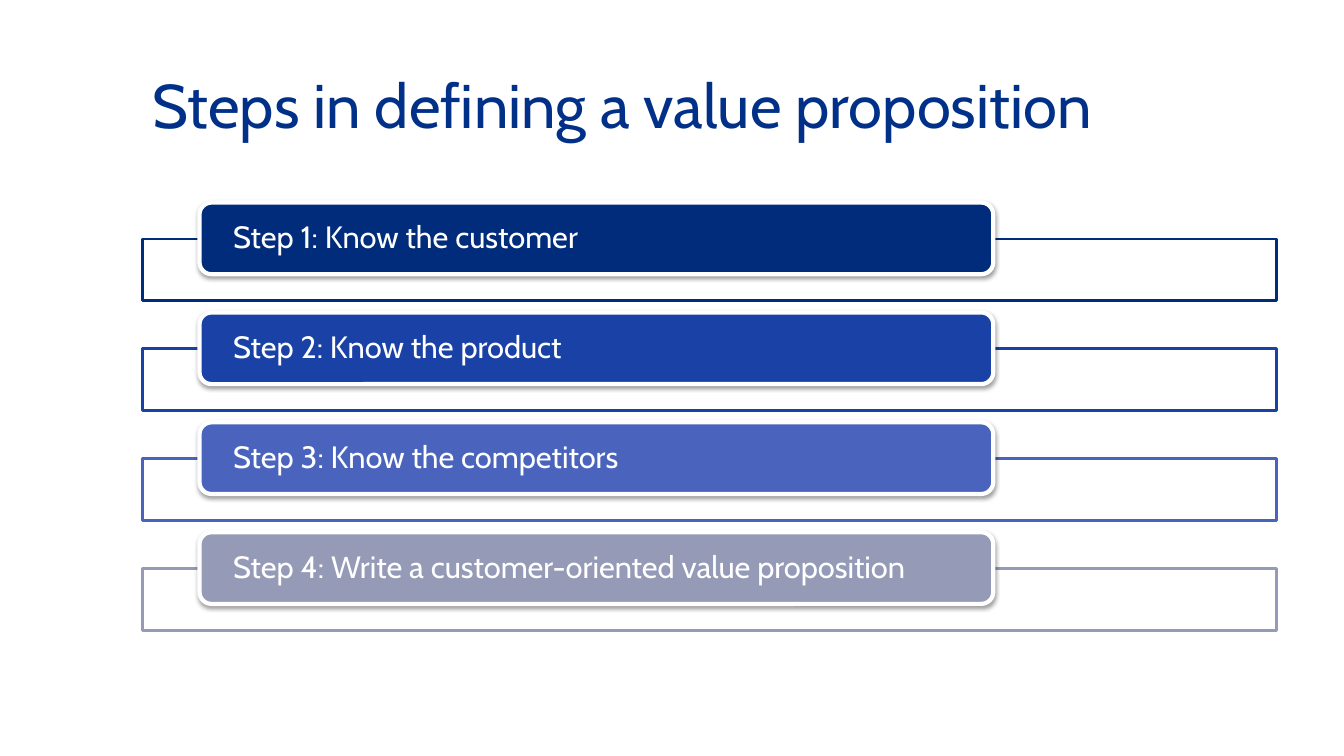
from dataclasses import dataclass

from lxml import etree
from pptx import Presentation
from pptx.dml.color import RGBColor
from pptx.enum.shapes import MSO_SHAPE
from pptx.enum.text import MSO_ANCHOR, PP_ALIGN
from pptx.oxml.ns import qn
from pptx.util import Pt

RECTANGLE = MSO_SHAPE.RECTANGLE
ROUNDED_RECTANGLE = MSO_SHAPE.ROUNDED_RECTANGLE
MIDDLE = MSO_ANCHOR.MIDDLE
LEFT = PP_ALIGN.LEFT


@dataclass(frozen=True)
class Theme:
    font: str = "Cabin"
    title_size: int = 44
    step_size: int = 22
    title_color: str = "003087"
    white: str = "FFFFFF"
    shadow: str = "000000"
    step_colors: tuple = ("002C7B", "1A42A6", "4A63BC", "959AB7")


THEME = Theme()
TITLE = "Steps in defining a value proposition"
STEPS = (
    "Step 1: Know the customer",
    "Step 2: Know the product",
    "Step 3: Know the competitors",
    "Step 4: Write a customer-oriented value proposition",
)


def write_text(shape, text, size, color, side_inset, end_inset):
    frame = shape.text_frame
    frame.word_wrap = True
    frame.vertical_anchor = MIDDLE
    frame.margin_left = frame.margin_right = Pt(side_inset)
    frame.margin_top = frame.margin_bottom = Pt(end_inset)
    paragraph = frame.paragraphs[0]
    paragraph.text = text
    paragraph.alignment = LEFT
    paragraph.font.name = THEME.font
    paragraph.font.size = Pt(size)
    paragraph.font.color.rgb = RGBColor.from_string(color)
    return paragraph


def add_box(slide, kind, left, top, width, height, fill, line, line_width):
    shape = slide.shapes.add_shape(kind, Pt(left), Pt(top), Pt(width), Pt(height))
    shape.fill.solid()
    shape.fill.fore_color.rgb = RGBColor.from_string(fill)
    shape.line.color.rgb = RGBColor.from_string(line)
    shape.line.width = Pt(line_width)
    shape.shadow.inherit = False
    return shape


def set_alpha(color_element, percent):
    etree.SubElement(color_element, qn("a:alpha"), val=str(percent * 1000))


def add_drop_shadow(shape):
    effects = shape.element.spPr.find(qn("a:effectLst"))
    shadow = etree.SubElement(
        effects, qn("a:outerShdw"), blurRad=str(Pt(3.1)), dist=str(Pt(1.6)),
        dir="5400000", rotWithShape="0",
    )
    set_alpha(etree.SubElement(shadow, qn("a:srgbClr"), val=THEME.shadow), 38)


def add_title(slide, left, top, width, height):
    box = slide.shapes.add_textbox(Pt(left), Pt(top), Pt(width), Pt(height))
    write_text(box, TITLE, THEME.title_size, THEME.title_color, 7.2, 3.6)


def add_step(slide, text, color, left, top, width, height):
    frame_height = 44
    frame = add_box(slide, RECTANGLE, left, top + height - frame_height,
                    width, frame_height, THEME.white, color, 2)
    set_alpha(frame.element.spPr.find(qn("a:solidFill"))[0], 90)

    label = add_box(slide, ROUNDED_RECTANGLE, left + width * 0.05, top,
                    width * 0.7, 51.2, color, THEME.white, 3)
    add_drop_shadow(label)
    paragraph = write_text(label, text, THEME.step_size, THEME.white, 21.6, 0)
    paragraph.line_spacing = 0.9


def add_steps(slide, left, top, width, height):
    step_height = 70
    pitch = (height - step_height) / (len(STEPS) - 1)
    for index, (text, color) in enumerate(zip(STEPS, THEME.step_colors)):
        add_step(slide, text, color, left, top + index * pitch, width, step_height)


def main():
    presentation = Presentation()
    presentation.slide_width = Pt(960)
    presentation.slide_height = Pt(540)
    slide = presentation.slides.add_slide(presentation.slide_layouts[6])
    add_title(slide, 102, 37.5, 810, 74)
    add_steps(slide, 102, 144.7, 810, 305.5)
    presentation.save("out.pptx")


if __name__ == "__main__":
    main()
